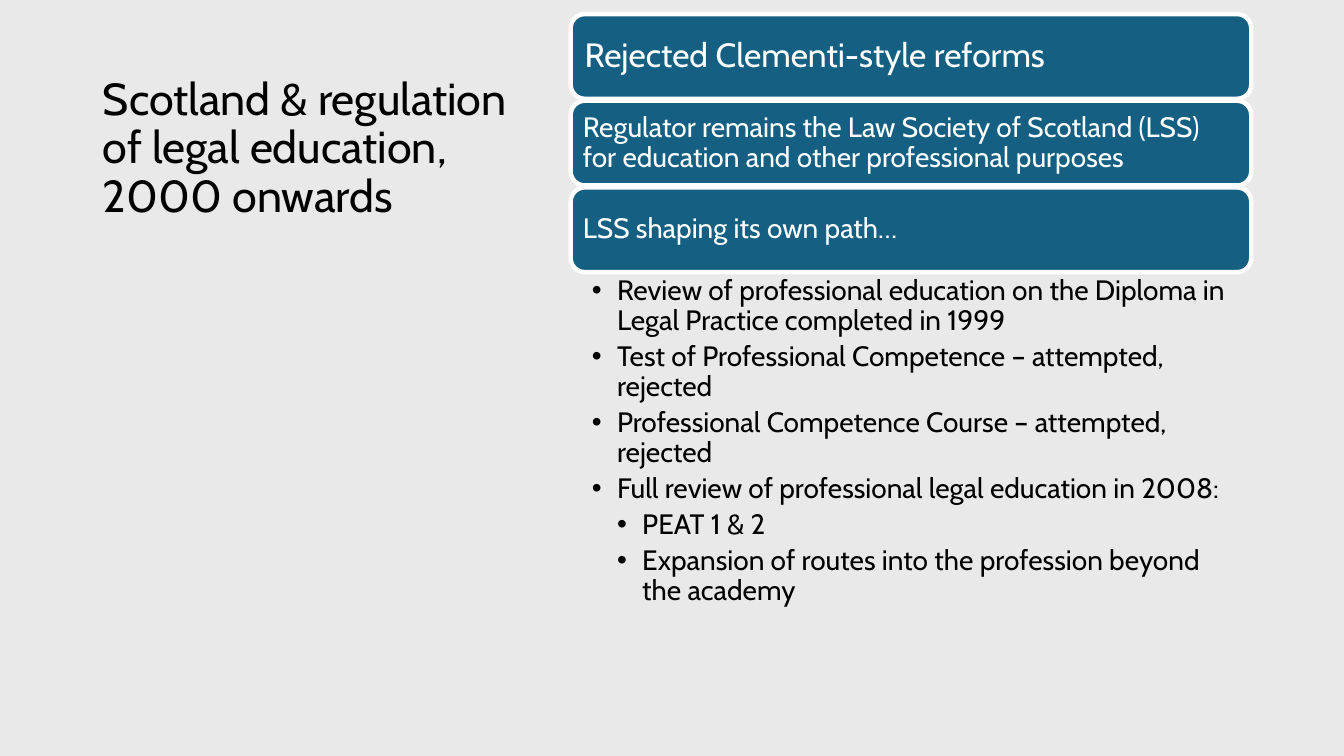
from lxml import etree
from pptx import Presentation
from pptx.dml.color import RGBColor
from pptx.enum.shapes import MSO_SHAPE as SHAPE
from pptx.enum.text import MSO_ANCHOR as ANCHOR, MSO_AUTO_SIZE as AUTO_SIZE, PP_ALIGN as ALIGN
from pptx.oxml.ns import qn
from pptx.util import Inches, Pt

FONT = "Cabin"
COLORS = {"bg": "E9E9E9", "bar": "156082", "white": "FFFFFF", "black": "000000"}

TITLE = "Scotland & regulation of legal education, 2000 onwards"

# Text, font size, inset
BARS = [
    ("Rejected Clementi-style reforms", 24, 0.1),
    ("Regulator remains the Law Society of Scotland (LSS) for education "
     "and other professional purposes", 20, 0.08),
    ("LSS shaping its own path…", 20, 0.08),
]

# Level, text
BULLETS = [
    (1, "Review of professional education on the Diploma in Legal Practice completed in 1999"),
    (1, "Test of Professional Competence – attempted, rejected"),
    (1, "Professional Competence Course – attempted, rejected"),
    (1, "Full review of professional legal education in 2008:"),
    (2, "PEAT 1 & 2"),
    (2, "Expansion of routes into the profession beyond the academy"),
]

COLUMN_LEFT, COLUMN_WIDTH = 5.66, 6.75
BAR_TOP, BAR_HEIGHT, BAR_PITCH = 0.14, 0.84, 0.86


def rgb(name):
    return RGBColor.from_string(COLORS[name])


def place(sp, left, top, width, height):
    sp.left, sp.top = Inches(left), Inches(top)
    sp.width, sp.height = Inches(width), Inches(height)


def set_frame(tf, anchor, left, top, right, bottom):
    tf.word_wrap = True
    tf.auto_size = AUTO_SIZE.NONE
    tf.vertical_anchor = anchor
    tf.margin_left, tf.margin_top = Inches(left), Inches(top)
    tf.margin_right, tf.margin_bottom = Inches(right), Inches(bottom)


def format_paragraph(p, size, color, space_after=0):
    p.alignment = ALIGN.LEFT
    p.line_spacing = 0.9
    p.space_before = Pt(0)
    p.space_after = Pt(space_after)
    for r in p.runs:
        r.font.name = FONT
        r.font.size = Pt(size)
        r.font.color.rgb = rgb(color)


def set_bullet(p, level):
    p.level = level
    pPr = p._p.get_or_add_pPr()
    pPr.set("marL", str(Inches(0.25 * level)))
    pPr.set("indent", str(Inches(-0.25)))
    etree.SubElement(pPr, qn("a:buChar"), char="•")


def fill_title(sp):
    place(sp, 0.92, 0.5, 4.3, 1.75)
    tf = sp.text_frame
    tf.text = TITLE
    set_frame(tf, ANCHOR.BOTTOM, 0.1, 0.05, 0.1, 0.05)
    format_paragraph(tf.paragraphs[0], 32, "black")


def add_bar(s, top, text, size, inset):
    sp = s.shapes.add_shape(SHAPE.ROUNDED_RECTANGLE, Inches(COLUMN_LEFT), Inches(top),
                            Inches(COLUMN_WIDTH), Inches(BAR_HEIGHT))
    sp.shadow.inherit = False
    sp.fill.solid()
    sp.fill.fore_color.rgb = rgb("bar")
    sp.line.color.rgb = rgb("white")
    sp.line.width = Pt(3.15)
    tf = sp.text_frame
    tf.text = text
    set_frame(tf, ANCHOR.MIDDLE, inset, inset, inset, inset)
    format_paragraph(tf.paragraphs[0], size, "white")


def fill_bullets(sp):
    place(sp, COLUMN_LEFT, 2.71, COLUMN_WIDTH, 3.47)
    tf = sp.text_frame
    tf.text = "\n".join(text for _, text in BULLETS)
    set_frame(tf, ANCHOR.TOP, 0.21, 0.03, 0.16, 0.03)
    for p, (level, _) in zip(tf.paragraphs, BULLETS):
        format_paragraph(p, 20, "black", space_after=4)
        set_bullet(p, level)


def main():
    prs = Presentation()
    prs.slide_width, prs.slide_height = Inches(13.33), Inches(7.5)
    s = prs.slides.add_slide(prs.slide_layouts[1])
    s.background.fill.solid()
    s.background.fill.fore_color.rgb = rgb("bg")

    # Title on the left
    fill_title(s.shapes.title)

    # Stacked bars with the list below
    for i, (text, size, inset) in enumerate(BARS):
        add_bar(s, BAR_TOP + i * BAR_PITCH, text, size, inset)
    fill_bullets(s.placeholders[1])

    prs.save("out.pptx")


if __name__ == "__main__":
    main()
